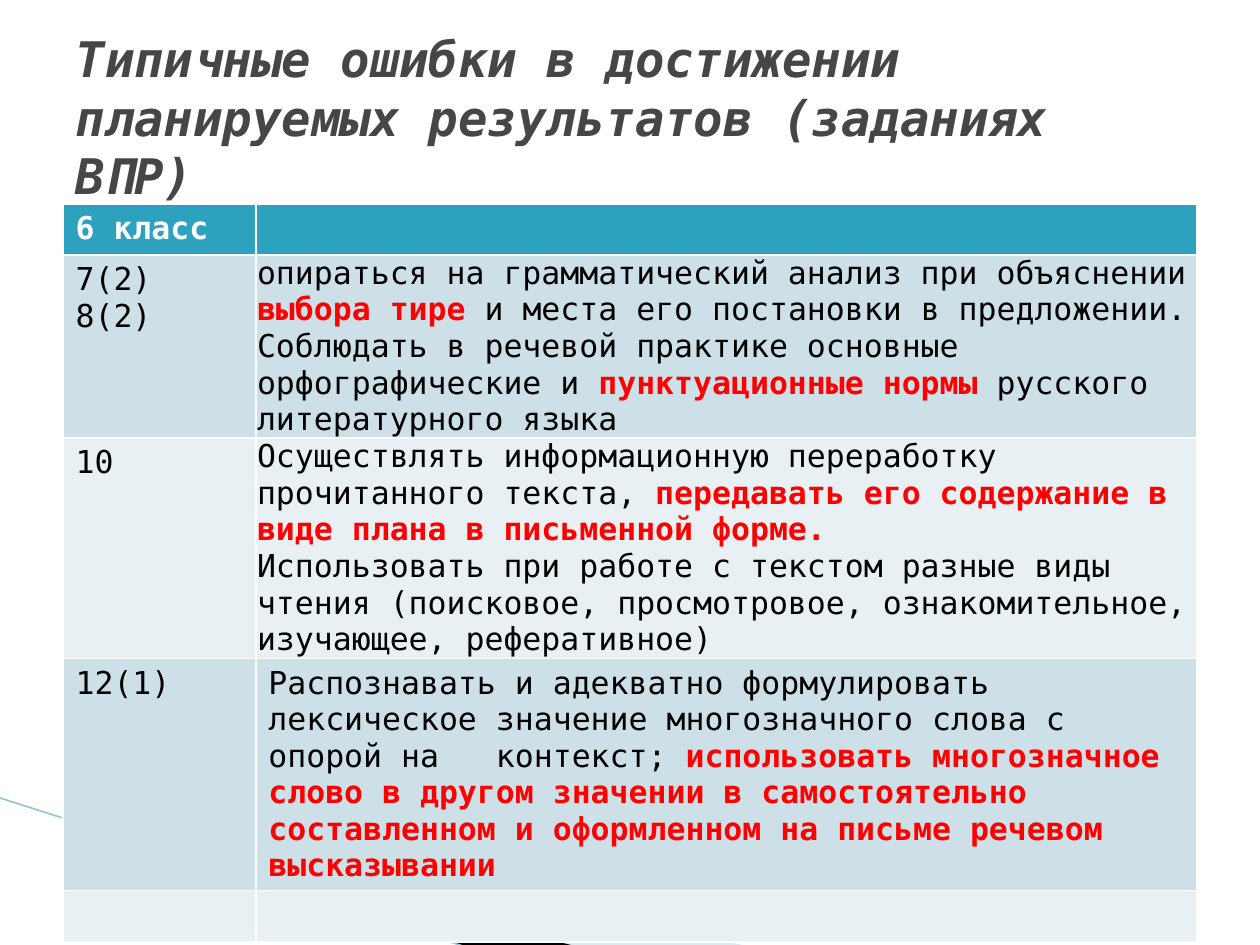
"""Build the slide on typical errors of grade 6 pupils."""
from lxml import etree
from pptx import Presentation
from pptx import util as u
from pptx.dml import color
from pptx.enum import shapes, text
from pptx.oxml import ns

FONT = "DejaVu Sans Mono"
COLORS = {"title": "464646", "header": "2DA2BF", "dark": "CDE0E8", "light": "E8F0F4",
          "white": "FFFFFF", "text": "000000", "accent": "FF0000",
          "ribbon": "A0CBDC", "shade": "000000", "line": "97C5D8"}
TITLE = "Типичные ошибки в достижении планируемых результатов (заданиях ВПР)"
COL_WIDTHS = [1.53, 7.47]
ROW_HEIGHTS = [0.4, 1.44, 1.75, 1.84, 0.41]
ROWS = [
    (["6 класс"], []),
    (["7(2)", "8(2)"], [
        ("опираться на грамматический анализ при объяснении ", "text"),
        ("выбора тире ", "accent"),
        ("и места его постановки в предложении. Cоблюдать в речевой практике "
         "основные орфографические и ", "text"),
        ("пунктуационные нормы ", "accent"),
        ("русского литературного языка", "text")]),
    (["10"], [
        ("Осуществлять информационную переработку прочитанного текста, ", "text"),
        ("передавать его содержание в виде плана в письменной форме.\n", "accent"),
        ("Использовать при работе с текстом разные виды чтения (поисковое, "
         "просмотровое, ознакомительное, изучающее, реферативное)", "text")]),
    (["12(1)"], [
        ("Распознавать и адекватно формулировать лексическое значение "
         "многозначного слова с опорой на   контекст; ", "text"),
        ("использовать многозначное слово в другом значении в самостоятельно "
         "составленном и оформленном на письме речевом высказывании", "accent")]),
    ([], []),
]


def rgb(name):
    return color.RGBColor.from_string(COLORS[name])


def style_run(r, size, name, bold=False, italic=False):
    r.font.name, r.font.size = FONT, u.Pt(size)
    r.font.bold, r.font.italic = bold, italic
    r.font.color.rgb = rgb(name)


def add_ribbon(s, points, name, alpha=None):
    pts = [(u.Inches(x), u.Inches(y)) for x, y in points]
    builder = s.shapes.build_freeform(*pts[0])
    builder.add_line_segments(pts[1:], close=True)
    sp = builder.convert_to_shape()
    sp.shadow.inherit = False
    sp.line.fill.background()
    sp.fill.solid()
    sp.fill.fore_color.rgb = rgb(name)
    if alpha is not None:
        clr = sp.element.spPr.find(".//" + ns.qn("a:srgbClr"))
        etree.SubElement(clr, ns.qn("a:alpha")).set("val", str(alpha * 1000))


def add_line(s, start, end):
    ends = [u.Inches(v) for v in (*start, *end)]
    line = s.shapes.add_connector(shapes.MSO_CONNECTOR.STRAIGHT, *ends)
    line.line.color.rgb = rgb("line")
    line.line.width = u.Pt(0.95)
    etree.SubElement(line.element.spPr, ns.qn("a:effectLst"))


def fill_label(cell, lines, name, bold):
    tf = cell.text_frame
    tf.text = "\n".join(lines)
    for p in tf.paragraphs:
        for r in p.runs:
            style_run(r, 18, name, bold)


def fill_rich(cell, parts):
    p = cell.text_frame.paragraphs[0]
    for words, name in parts:
        r = p.add_run()
        r.text = words.rstrip("\n")
        style_run(r, 18, name, name == "accent")
        if words.endswith("\n"):
            p.add_line_break()


def add_errors_table(s):
    frame = s.shapes.add_table(len(ROWS), len(COL_WIDTHS), u.Inches(0.5), u.Inches(1.62),
                               u.Inches(sum(COL_WIDTHS)), u.Inches(sum(ROW_HEIGHTS)))
    table = frame.table
    for col, width in zip(table.columns, COL_WIDTHS):
        col.width = u.Inches(width)
    for i, (labels, parts) in enumerate(ROWS):
        row = table.rows[i]
        row.height = u.Inches(ROW_HEIGHTS[i])
        band = "header" if i == 0 else ("light", "dark")[i % 2]
        for cell in row.cells:
            cell.fill.solid()
            cell.fill.fore_color.rgb = rgb(band)
        fill_label(row.cells[0], labels, "white" if i == 0 else "text", i == 0)
        fill_rich(row.cells[1], parts)
    for i in (1, 2):
        cell = table.cell(i, 1)
        cell.margin_left = cell.margin_right = u.Inches(0.01)
        cell.margin_top = cell.margin_bottom = 0
    table.cell(2, 1).vertical_anchor = text.MSO_ANCHOR.MIDDLE


def set_title(s):
    sp = s.shapes.title
    sp.left, sp.top, sp.width, sp.height = map(u.Inches, (0.5, 0.3, 9, 1.25))
    tf = sp.text_frame
    tf.text = TITLE
    tf.word_wrap = True
    tf.auto_size = text.MSO_AUTO_SIZE.NONE
    tf.vertical_anchor = text.MSO_ANCHOR.MIDDLE
    p = tf.paragraphs[0]
    p.alignment = text.PP_ALIGN.LEFT
    style_run(p.runs[0], 28, "title", bold=True, italic=True)
    sp.element.getparent().append(sp.element)


def main():
    prs = Presentation()
    prs.slide_width, prs.slide_height = u.Inches(10), u.Inches(7.5)
    s = prs.slides.add_slide(prs.slide_layouts[5])
    add_ribbon(s, [(0.55, 6.51), (5.95, 7.51), (4.56, 7.51), (0.55, 6.5)], "ribbon", 40)
    add_ribbon(s, [(0.53, 6.49), (4.57, 7.51), (3.72, 7.52), (0.54, 6.5)], "shade")
    add_line(s, (-0.01, 6.33), (3.71, 7.52))
    add_errors_table(s)
    set_title(s)
    prs.save("out.pptx")


if __name__ == "__main__":
    main()
